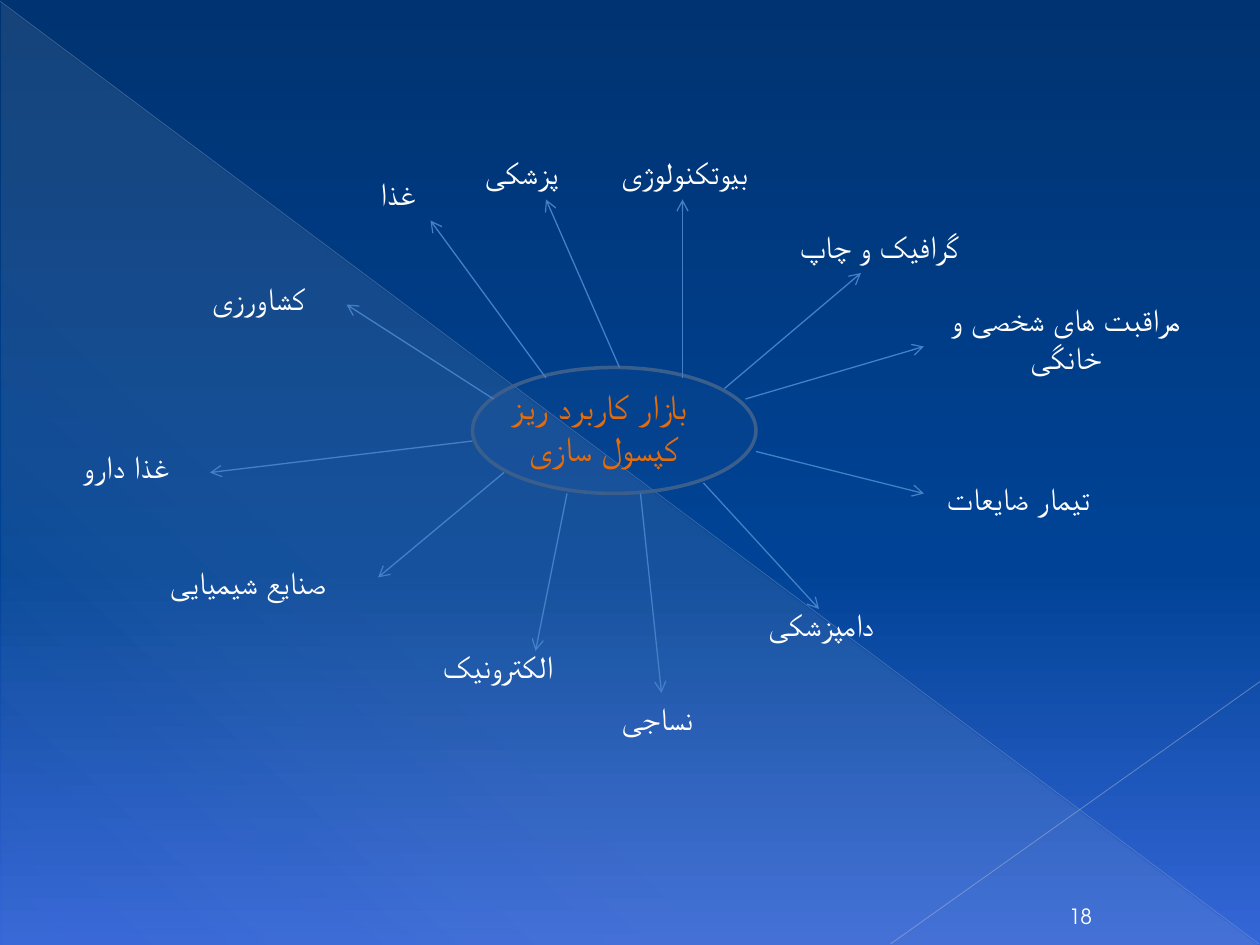
import pptx
import pptx.util
import pptx.dml.color
import pptx.enum.shapes
import pptx.enum.text
import pptx.oxml
import pptx.oxml.ns
import lxml.etree

Pt = pptx.util.Pt
qn = pptx.oxml.ns.qn
SHAPE = pptx.enum.shapes.MSO_SHAPE
ALIGN = pptx.enum.text.PP_ALIGN
ANCHOR = pptx.enum.text.MSO_ANCHOR
FACE = "TeX Gyre Adventor"

SKY = [(0, "003371", 100), (60, "004396", 100), (100, "3566D7", 100)]
SHEEN = [(0, "EEECE1", 10), (70, "EEECE1", 8), (100, "EEECE1", 1)]

# text, label (left, top, width, height), arrow (from x, y, to x, y), centred
RAYS = [
    ("بیوتکنولوژی", (330, 0, 108, 29), (372, 132, 372, 30), False),
    ("پزشکی", (252, 0, 78, 29), (336, 126, 294, 30), False),
    ("غذا", (192, 12, 48, 29), (294, 132, 228, 42), False),
    ("کشاورزی", (96, 72, 98.5, 29), (264, 144, 180, 90), False),
    ("غذا دارو", (0, 168, 108, 29), (252, 168, 102, 186), True),
    ("صنایع شیمیایی", (72, 234, 144, 29), (270, 186, 198, 246), False),
    ("الکترونیک", (228, 282, 90, 29), (306, 198, 288, 288), False),
    ("نساجی", (330, 312, 84, 29), (348, 198, 360, 312), False),
    ("دامپزشکی", (414, 258, 96, 29), (384, 192, 450, 264), False),
    ("تیمار ضایعات", (516, 186, 108, 30), (414, 174, 510, 198), False),
    ("گرافیک و چاپ", (432, 42, 120, 29), (396, 138, 474, 72), False),
    ("مراقبت های شخصی و خانگی", (504, 84, 174, 51), (408, 144, 510, 114), True),
]


def tint(code):
    return pptx.dml.color.RGBColor.from_string(code)


def put(item, form):
    for name, value in form.items():
        setattr(item, name, value)


def sub(node, tag, **form):
    return lxml.etree.SubElement(node, qn(tag), form)


def fade(node, part):
    sub(node, "a:alpha", val=str(part * 1000))


def blend(fill, root, stops, angle):
    fill.gradient()
    grad = root.find(".//" + qn("a:gradFill"))
    row = grad.find(qn("a:gsLst"))
    for old in list(row):
        row.remove(old)
    for place, code, part in stops:
        stop = sub(row, "a:gs", pos=str(place * 1000))
        fade(sub(stop, "a:srgbClr", val=code), part)
    grad.find(qn("a:lin")).set("ang", str(angle * 60000))


def rule(slide, ends, code, width, part=100, head=False):
    kind = pptx.enum.shapes.MSO_CONNECTOR.STRAIGHT
    line = slide.shapes.add_connector(kind, *map(Pt, ends))
    line.line.color.rgb = tint(code)
    line.line.width = Pt(width)
    props = line.element.spPr
    if part < 100:
        fade(props.find(".//" + qn("a:srgbClr")), part)
    if head:
        sub(props.find(qn("a:ln")), "a:tailEnd", type="arrow")
    sub(props, "a:effectLst")


def shape(slide, kind, box):
    item = slide.shapes.add_shape(kind, *map(Pt, box))
    item.shadow.inherit = False
    return item


def write(slide, box, lines, size, code, align=None, anchor=ANCHOR.TOP):
    item = slide.shapes.add_textbox(*map(Pt, box))
    frame = item.text_frame
    put(frame, {"word_wrap": True, "vertical_anchor": anchor})
    frame.text = "\n".join(lines)
    for para in frame.paragraphs:
        para.alignment = align
        for run in para.runs:
            put(run.font, {"size": Pt(size), "name": FACE})
            run.font.color.rgb = tint(code)
    for props in item.element.iter(qn("a:rPr")):
        sub(props, "a:cs", typeface=FACE)


def draw_back(slide, box):
    left, top, wide, high = box
    right, base = left + wide, top + high
    blend(slide.background.fill, slide.element, SKY, 90)
    sheen = shape(slide, SHAPE.RIGHT_TRIANGLE, (left + 0.7, top + 1.4, wide - 1.4, high - 1.4))
    blend(sheen.fill, sheen.element, SHEEN, 133)
    sheen.line.fill.background()
    rule(slide, (left, top + 0.7, right - 0.7, base - 0.7), "ADB6CE", 0.39, 35)
    rule(slide, (right, top + 389.5, right - 211, base - 0.7), "B6BED3", 0.47, 45)
    write(slide, (right - 122.4, base - 29.5, 39.6, 23.8), ["18"], 12, "FFFFFF",
          ALIGN.CENTER, ANCHOR.BOTTOM)


def draw_hub(slide, box):
    left, top, wide, high = box
    hub = shape(slide, SHAPE.OVAL, box)
    hub.fill.solid()
    hub.fill.fore_color.rgb = tint("4F81BD")
    fade(hub.element.spPr.find(".//" + qn("a:srgbClr")), 6)
    hub.line.color.rgb = tint("3A5F8C")
    hub.line.width = Pt(2)
    write(slide, (left - 30, top + 6, wide + 48, high - 16.5),
          ["بازار کاربرد ریز ", "کپسول سازی"], 20, "E46C0A", ALIGN.CENTER)


def draw_map(slide, box):
    left, top = box[:2]
    draw_hub(slide, (left + 252, top + 126, 162, 72))
    for text, (x, y, wide, high), (ax, ay, bx, by), mid in RAYS:
        rule(slide, (left + ax, top + ay, left + bx, top + by), "4480C8", 0.75, head=True)
        write(slide, (left + x, top + y, wide, high), [text], 18, "FFFFFF",
              ALIGN.CENTER if mid else None)


def main():
    deck = pptx.Presentation()
    put(deck, {"slide_width": Pt(720), "slide_height": Pt(540)})
    slide = deck.slides.add_slide(deck.slide_layouts.get_by_name("Blank"))
    draw_back(slide, (0, 0, 720, 540))
    draw_map(slide, (18, 84, 678, 342))
    deck.save("out.pptx")


if __name__ == "__main__":
    main()
